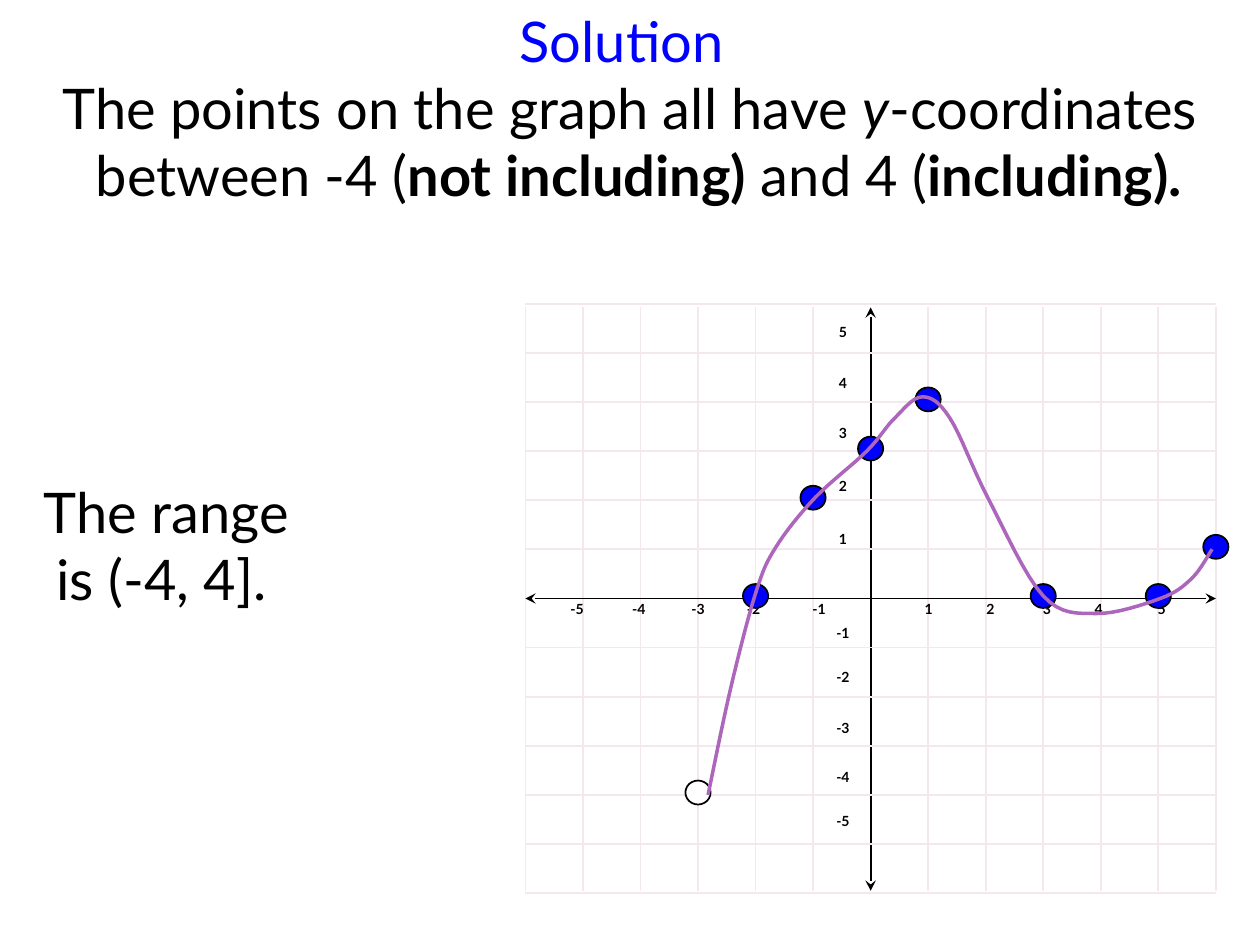
from lxml import etree
from pptx import Presentation
from pptx.dml.color import RGBColor
from pptx.enum.shapes import MSO_CONNECTOR, MSO_SHAPE
from pptx.enum.text import PP_ALIGN
from pptx.oxml.ns import qn
from pptx.util import Inches, Pt

STRAIGHT = MSO_CONNECTOR.STRAIGHT
OVAL = MSO_SHAPE.OVAL
CENTER, LEFT = PP_ALIGN.CENTER, PP_ALIGN.LEFT

GRID_LEFT, GRID_RIGHT = 4.17, 9.65
GRID_TOP, GRID_BOTTOM = 2.44, 7.07
ORIGIN_X, ORIGIN_Y = 6.91, 4.75
STEP_X, STEP_Y = (GRID_RIGHT - GRID_LEFT) / 12, 0.39
GRID_STEPS = range(-6, 7)

# Labels are placed by hand, so each number has its own offset.
X_LABEL_LEFTS = {-5: 4.17, -4: 4.66, -3: 5.13, -2: 5.57, -1: 6.09,
                 1: 6.96, 2: 7.45, 3: 7.9, 4: 8.31, 5: 8.81}
Y_LABEL_TOPS = {-5: 6.4, -4: 6.05, -3: 5.66, -2: 5.26, -1: 4.91,
                1: 4.16, 2: 3.74, 3: 3.32, 4: 2.92, 5: 2.52}
X_LABEL_TOP, Y_LABEL_LEFT = 4.72, 6.28

# Graph coordinates of the marked points.
OPEN_POINT = (-3, -4)
CLOSED_POINTS = [(-2, 0), (3, 0), (5, 0), (6, 1), (1, 4), (0, 3), (-1, 2)]
POINT_WIDTH, POINT_HEIGHT = 0.2, 0.19
POINT_SHIFT_Y = -0.02

# Slide positions the smooth curve passes through, from left to right.
CURVE_KNOTS = [(5.62, 6.31), (5.8, 5.46), (6, 4.7), (6.16, 4.34), (6.47, 3.95),
               (6.88, 3.58), (7.1, 3.32), (7.32, 3.15), (7.54, 3.32),
               (7.84, 3.95), (8.28, 4.73), (8.7, 4.87), (9.21, 4.75),
               (9.46, 4.59), (9.62, 4.36)]
SAMPLES_PER_SPAN = 8


def color(hex_string):
    return RGBColor.from_string(hex_string)


def grid_position(x, y):
    """Turn graph coordinates into inches on the slide."""
    return ORIGIN_X + x * STEP_X, ORIGIN_Y - y * STEP_Y


def spline_value(before, start, end, after, t):
    """Catmull-Rom interpolation between start and end, with t from 0 to 1."""
    return 0.5 * (2 * start + (end - before) * t
                  + (2 * before - 5 * start + 4 * end - after) * t ** 2
                  + (3 * start - before - 3 * end + after) * t ** 3)


def smooth_points(knots):
    """Sample a smooth curve that passes through every knot."""
    padded = [knots[0], *knots, knots[-1]]
    points = [knots[0]]
    for span in zip(padded, padded[1:], padded[2:], padded[3:]):
        xs, ys = zip(*span)
        for sample in range(1, SAMPLES_PER_SPAN + 1):
            t = sample / SAMPLES_PER_SPAN
            points.append((spline_value(*xs, t), spline_value(*ys, t)))
    return points


class GraphSlide:
    font_name = "Lato"
    text_size, label_size = 32, 8
    black, white, blue = "000000", "FFFFFF", "0000FF"
    grid_color, curve_color = "F4E7ED", "AC66BB"

    def __init__(self, slide):
        self.slide = slide

    def text_box(self, left, top, width, height):
        box = self.slide.shapes.add_textbox(
            Inches(left), Inches(top), Inches(width), Inches(height))
        box.text_frame.word_wrap = True
        return box.text_frame

    def style(self, paragraph, size, hex_color, alignment=CENTER, bold=False):
        paragraph.alignment = alignment
        font = paragraph.font
        font.name, font.size, font.bold = self.font_name, Pt(size), bold
        font.color.rgb = color(hex_color)

    def indent(self, paragraph, margin, first_line=0, tab=None):
        properties = paragraph._p.get_or_add_pPr()
        properties.set("marL", str(Inches(margin)))
        properties.set("indent", str(Inches(first_line)))
        if tab:
            tabs = etree.SubElement(properties, qn("a:tabLst"))
            etree.SubElement(tabs, qn("a:tab"), pos=str(Inches(tab)), algn="l")

    def label(self, number, left, top):
        paragraph = self.text_box(left, top, 0.82, 0.59).paragraphs[0]
        paragraph.text = str(number)
        self.style(paragraph, self.label_size, self.black, bold=True)

    def line(self, start, end, axis=False):
        """Draw a grid line, or a black axis with an arrowhead at each end."""
        connector = self.slide.shapes.add_connector(
            STRAIGHT, *(Inches(value) for value in (*start, *end)))
        connector.line.width = Pt(1)
        connector.line.color.rgb = color(self.black if axis else self.grid_color)
        if axis:
            outline = connector.line._get_or_add_ln()
            for tag in ("a:headEnd", "a:tailEnd"):
                etree.SubElement(outline, qn(tag), type="stealth")
        etree.SubElement(connector._element.spPr, qn("a:effectLst"))

    def point(self, x, y, fill):
        """Mark the point with graph coordinates x and y."""
        center_x, center_y = grid_position(x, y)
        shape = self.slide.shapes.add_shape(
            OVAL, Inches(center_x - POINT_WIDTH / 2),
            Inches(center_y - POINT_HEIGHT / 2 + POINT_SHIFT_Y),
            Inches(POINT_WIDTH), Inches(POINT_HEIGHT))
        shape.shadow.inherit = False
        shape.fill.solid()
        shape.fill.fore_color.rgb = color(fill)
        shape.line.color.rgb = color(self.black)
        shape.line.width = Pt(1)

    def curve(self, knots):
        start, *rest = [(Inches(x), Inches(y)) for x, y in smooth_points(knots)]
        builder = self.slide.shapes.build_freeform(*start)
        builder.add_line_segments(rest, close=False)
        shape = builder.convert_to_shape()
        shape.shadow.inherit = False
        shape.fill.background()
        shape.line.color.rgb = color(self.curve_color)
        shape.line.width = Pt(2)

    def solution_text(self):
        frame = self.text_box(0, 0, 10, 3)
        title = frame.paragraphs[0]
        title.text = "Solution\t"
        self.indent(title, 0.25, -0.25, tab=1.75)
        self.style(title, self.text_size, self.blue)

        explanation = frame.add_paragraph()
        self.indent(explanation, 0.25, -0.25)
        self.style(explanation, self.text_size, self.black)
        for text, bold, italic in [
                ("The points on the graph all have ", False, False),
                ("y", False, True),
                ("-coordinates between -4 (", False, False),
                ("not including)", True, False),
                (" and 4 (", False, False),
                ("including). ", True, False)]:
            run = explanation.add_run()
            run.text = text
            run.font.bold, run.font.italic = bold, italic

        for text, margin, space in [("The range", 0.25, 154),
                                    ("is (-4, 4].", 0.35, 0)]:
            paragraph = frame.add_paragraph()
            paragraph.text = text
            paragraph.space_before = Pt(space)
            self.indent(paragraph, margin)
            self.style(paragraph, self.text_size, self.black, LEFT)


def main():
    presentation = Presentation()
    presentation.slide_width, presentation.slide_height = Inches(10), Inches(7.5)
    graph = GraphSlide(presentation.slides.add_slide(presentation.slide_layouts[6]))

    graph.solution_text()
    for step in GRID_STEPS:
        x, _ = grid_position(step, 0)
        graph.line((x, GRID_TOP), (x, GRID_BOTTOM), axis=step == 0)
    for step in GRID_STEPS:
        _, y = grid_position(0, step)
        graph.line((GRID_RIGHT, y), (GRID_LEFT, y), axis=step == 0)
    for number, left in X_LABEL_LEFTS.items():
        graph.label(number, left, X_LABEL_TOP)
    for number, top in Y_LABEL_TOPS.items():
        graph.label(number, Y_LABEL_LEFT, top)
    graph.point(*OPEN_POINT, graph.white)
    for x, y in CLOSED_POINTS:
        graph.point(x, y, graph.blue)
    graph.curve(CURVE_KNOTS)

    presentation.save("out.pptx")


if __name__ == "__main__":
    main()
